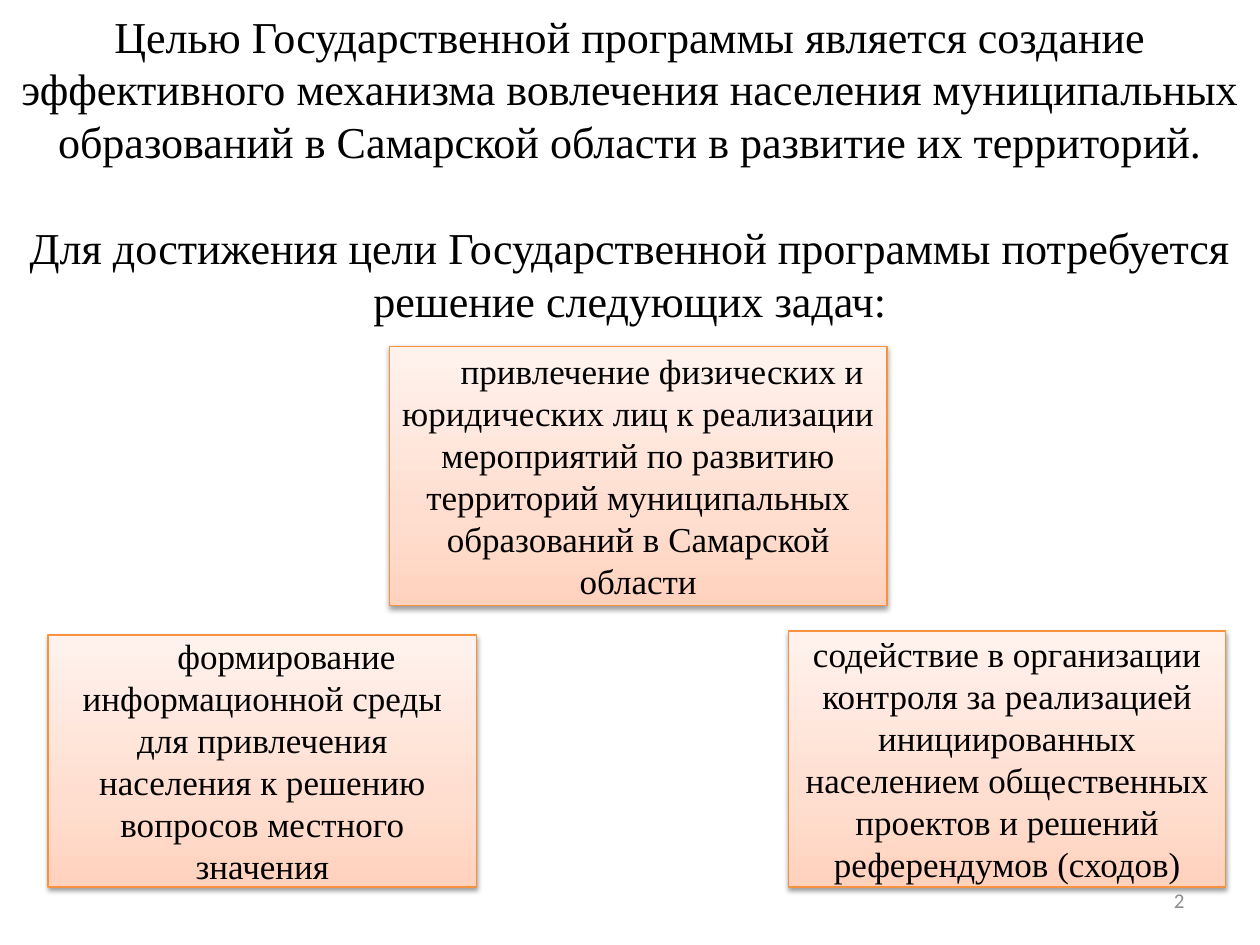
from copy import deepcopy

from lxml import etree
from pptx import Presentation
from pptx.dml.color import RGBColor
from pptx.enum.shapes import MSO_SHAPE
from pptx.enum.text import MSO_ANCHOR, MSO_AUTO_SIZE, PP_ALIGN
from pptx.oxml.ns import qn
from pptx.util import Cm, Pt

RECT = MSO_SHAPE.RECTANGLE
TOP, MIDDLE = MSO_ANCHOR.TOP, MSO_ANCHOR.MIDDLE
CENTER, RIGHT = PP_ALIGN.CENTER, PP_ALIGN.RIGHT
NO_FIT = MSO_AUTO_SIZE.NONE

BLACK = RGBColor(0x00, 0x00, 0x00)
GREY = RGBColor(0x8C, 0x8C, 0x8C)
ORANGE = RGBColor(0xF6, 0x92, 0x40)
GRADIENT = (
    (0, RGBColor(0xFF, 0xD2, 0xBD)),
    (0.35, RGBColor(0xFF, 0xDE, 0xD0)),
    (1, RGBColor(0xFF, 0xF2, 0xED)),
)

SERIF = "Times New Roman"
TITLE_FONT = {"name": SERIF, "size": Pt(25.2)}
TASK_FONT = {"name": SERIF, "size": Pt(20)}
NUMBER_FONT = {"name": "Calibri", "size": Pt(12)}

GOALS = (
    "Целью Государственной программы является создание эффективного механизма "
    "вовлечения населения муниципальных образований в Самарской области "
    "в развитие их территорий.",
    "Для достижения цели Государственной программы потребуется решение "
    "следующих задач:",
)
TASKS = (
    ((0.97, 12.8, 8.64, 5.08), 0.97,
     "формирование информационной среды для привлечения населения к решению "
     "вопросов местного значения"),
    ((7.85, 6.98, 10.03, 5.23), 0.97,
     "привлечение физических и юридических лиц к реализации мероприятий "
     "по развитию территорий муниципальных образований в Самарской области"),
    ((15.9, 12.72, 8.81, 5.16), 0,
     "содействие в организации контроля за реализацией инициированных "
     "населением общественных проектов и решений референдумов (сходов)"),
)


def set_attrs(obj, values):
    """Set each named attribute of an object."""
    for name, value in values.items():
        setattr(obj, name, value)


def set_font(font, values, color):
    """Format a font and give it a colour."""
    set_attrs(font, values)
    font.color.rgb = color


def set_frame(tf, anchor):
    """Make a text frame wrap at a fixed size."""
    set_attrs(tf, {"word_wrap": True, "auto_size": NO_FIT,
                   "vertical_anchor": anchor})


def add_title(s):
    """Fill the title placeholder with the programme goals."""
    sp = s.shapes.title
    set_attrs(sp, {"left": Cm(0), "top": Cm(0),
                   "width": Cm(25.4), "height": Cm(8.28)})
    tf = sp.text_frame
    set_frame(tf, TOP)
    tf.margin_top = Cm(0.18)
    tf.text = "\n".join(GOALS)
    for i, p in enumerate(tf.paragraphs):
        set_attrs(p, {"alignment": CENTER, "space_before": Pt(30 * i)})
        set_font(p.runs[0].font, TITLE_FONT, BLACK)


def fill_gradient(sp):
    """Give a shape the three-stop vertical gradient."""
    sp.fill.gradient()
    sp.fill.gradient_angle = 90
    stops = sp._element.spPr.find(".//" + qn("a:gsLst"))
    stops.append(deepcopy(stops[0]))
    for stop, (position, color) in zip(sp.fill.gradient_stops, GRADIENT):
        stop.position = position
        stop.color.rgb = color


def add_shadow(sp):
    """Give a shape a soft shadow below it."""
    sp.shadow.inherit = False
    effects = sp._element.spPr.find(qn("a:effectLst"))
    shadow = etree.SubElement(effects, qn("a:outerShdw"), blurRad=str(Pt(3.1)),
                              dist=str(Pt(1.6)), dir="5400000", rotWithShape="0")
    color = etree.SubElement(shadow, qn("a:srgbClr"), val=str(BLACK))
    etree.SubElement(color, qn("a:alpha"), val="38000")


def add_task(s, box, indent, text):
    """Add a shaded rectangle holding one task."""
    sp = s.shapes.add_shape(RECT, *map(Cm, box))
    fill_gradient(sp)
    sp.line.color.rgb = ORANGE
    sp.line.width = Pt(0.75)
    add_shadow(sp)
    set_frame(sp.text_frame, MIDDLE)
    p = sp.text_frame.paragraphs[0]
    p.alignment = CENTER
    if indent:
        p._p.get_or_add_pPr().set("indent", str(Cm(indent)))
    r = p.add_run()
    r.text = text
    set_font(r.font, TASK_FONT, BLACK)


def add_slide_number(s):
    """Add the slide number as a field."""
    tf = s.shapes.add_textbox(Cm(18.2), Cm(17.65), Cm(5.93), Cm(1.01)).text_frame
    set_frame(tf, MIDDLE)
    p = tf.paragraphs[0]
    p.alignment = RIGHT
    r = p.add_run()
    r.text = "2"
    set_font(r.font, NUMBER_FONT, GREY)
    field = etree.SubElement(p._p, qn("a:fld"), type="slidenum",
                             id="{B19B0651-EE4F-4900-A07F-96A6BFA9D0F0}")
    field.extend(list(r._r))
    p._p.remove(r._r)


def main():
    """Build the slide and save it."""
    prs = Presentation()
    set_attrs(prs, {"slide_width": Cm(25.4), "slide_height": Cm(19.05)})
    prs.element.set("firstSlideNum", "2")
    s = prs.slides.add_slide(prs.slide_layouts[5])
    add_title(s)
    for box, indent, text in TASKS:
        add_task(s, box, indent, text)
    add_slide_number(s)
    prs.save("out.pptx")


if __name__ == "__main__":
    main()
